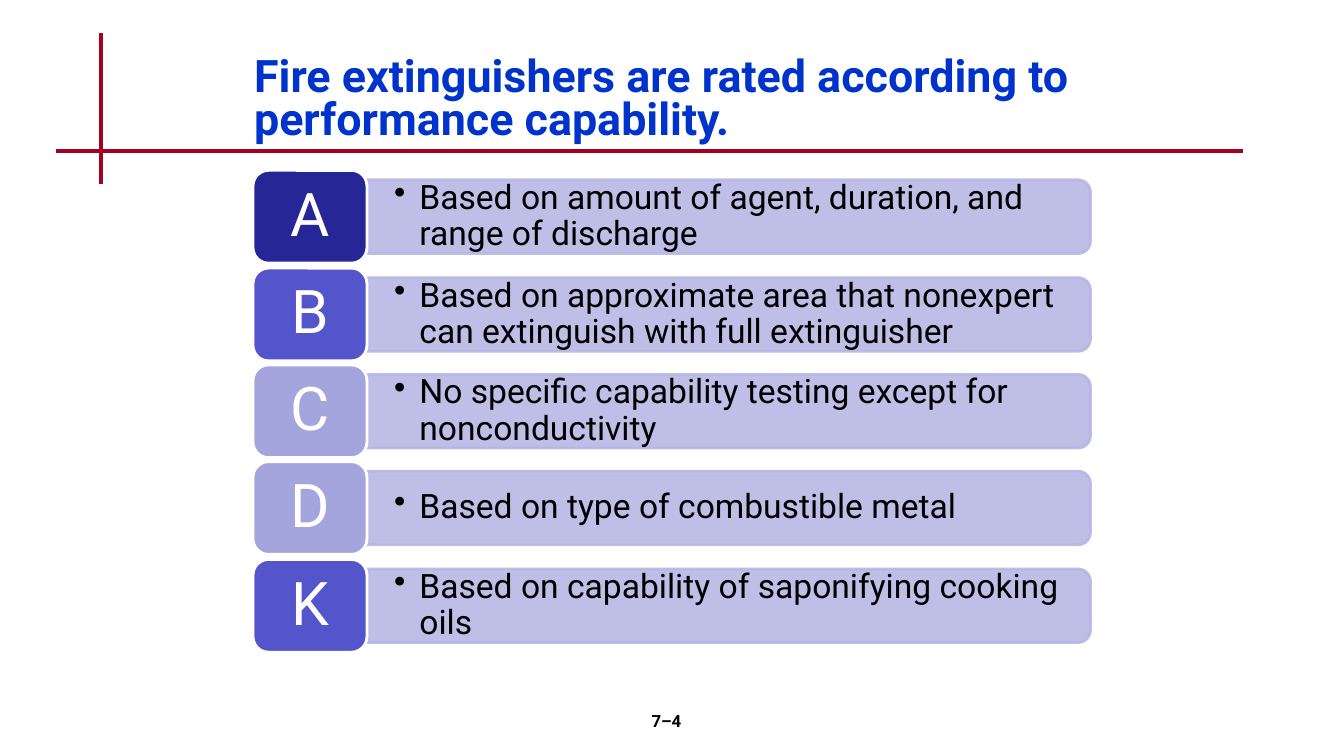
from lxml.etree import SubElement
from pptx import Presentation
from pptx.dml.color import RGBColor
from pptx.enum.shapes import MSO_CONNECTOR, MSO_SHAPE
from pptx.enum.text import MSO_ANCHOR, MSO_AUTO_SIZE, PP_ALIGN
from pptx.oxml.ns import qn
from pptx.util import Pt

PX = 9144  # 100 px to the inch
FONT = "Roboto"
COLORS = {
    "title": "0033CC", "rule": "A50021", "bar": "B7B7E5", "text": "000000",
    "white": "FFFFFF", "navy": "262697", "indigo": "5555CB", "lavender": "A5A5DE",
}
RATINGS = [
    ("A", "navy", "Based on amount of agent, duration, and range of discharge"),
    ("B", "indigo", "Based on approximate area that nonexpert can extinguish with full extinguisher"),
    ("C", "lavender", "No specific capability testing except for nonconductivity"),
    ("D", "lavender", "Based on type of combustible metal"),
    ("K", "indigo", "Based on capability of saponifying cooking oils"),
]


def write(shape, text, size, color, align, anchor, spacing=1.0, bold=False, inset=(10, 5)):
    frame = shape.text_frame
    frame.word_wrap = True
    frame.auto_size = MSO_AUTO_SIZE.NONE
    frame.vertical_anchor = anchor
    frame.margin_left = frame.margin_right = inset[0] * PX
    frame.margin_top = frame.margin_bottom = inset[1] * PX
    frame.text = text
    line = frame.paragraphs[0]
    line.alignment = align
    line.line_spacing = spacing
    line.font.name = FONT
    line.font.size = Pt(size)
    line.font.bold = bold
    line.font.color.rgb = RGBColor.from_string(COLORS[color])
    return line


def add_block(preset, box, fill, outline):
    block = slide.shapes.add_shape(preset, *[n * PX for n in box])
    block.shadow.inherit = False
    block.fill.solid()
    block.fill.fore_color.rgb = RGBColor.from_string(COLORS[fill])
    block.line.color.rgb = RGBColor.from_string(COLORS[outline])
    block.line.width = Pt(2)
    return block


deck = Presentation()
deck.slide_width, deck.slide_height = 1333 * PX, 750 * PX
slide = deck.slides.add_slide(deck.slide_layouts[5])

# Crossed rules
for ends in [(100, 33, 100, 183), (56, 150, 1233, 150)]:
    rule = slide.shapes.add_connector(MSO_CONNECTOR.STRAIGHT, *[n * PX for n in ends])
    rule.line.color.rgb = RGBColor.from_string(COLORS["rule"])
    rule.line.width = Pt(3)
    SubElement(rule._element.spPr, qn("a:effectLst"))

# Title
title = slide.shapes.title
title.left, title.top, title.width, title.height = [n * PX for n in (242, 50, 850, 100)]
write(title, "Fire extinguishers are rated according to performance capability.",
      32, "title", PP_ALIGN.LEFT, MSO_ANCHOR.MIDDLE, 0.8, True)

# One row per extinguisher class
for row, (letter, tile_color, rating) in enumerate(RATINGS):
    top = round(169 + 96.5 * row)

    # Bar with rounded right end
    bar = add_block(MSO_SHAPE.ROUND_2_SAME_RECTANGLE, (686, top - 313, 73, 718), "bar", "bar")
    bar.rotation = 90
    for color in bar._element.spPr.iter(qn("a:srgbClr")):
        SubElement(color, qn("a:alpha"), val="90000")

    # Bulleted rating
    label = slide.shapes.add_textbox(364 * PX, (top + 13) * PX, 714 * PX, 66 * PX)
    line = write(label, rating, 24, "text", PP_ALIGN.LEFT, MSO_ANCHOR.MIDDLE, 0.9, inset=(27, 14))
    indent = line._p.get_or_add_pPr()
    indent.set("marL", str(25 * PX))
    indent.set("indent", str(-25 * PX))
    bullet = SubElement(indent, qn("a:buChar"), char="•")
    indent.find(qn("a:defRPr")).addprevious(bullet)

    # Class letter
    tile = add_block(MSO_SHAPE.ROUNDED_RECTANGLE, (251, top, 113, 92), tile_color, "white")
    write(tile, letter, 43, "white", PP_ALIGN.CENTER, MSO_ANCHOR.MIDDLE, 0.9, inset=(18, 9))

# Page number
page = slide.shapes.add_textbox(522 * PX, 700 * PX, 278 * PX, 50 * PX)
write(page, "7–4", 12, "text", PP_ALIGN.CENTER, MSO_ANCHOR.TOP, bold=True)

deck.save("out.pptx")
